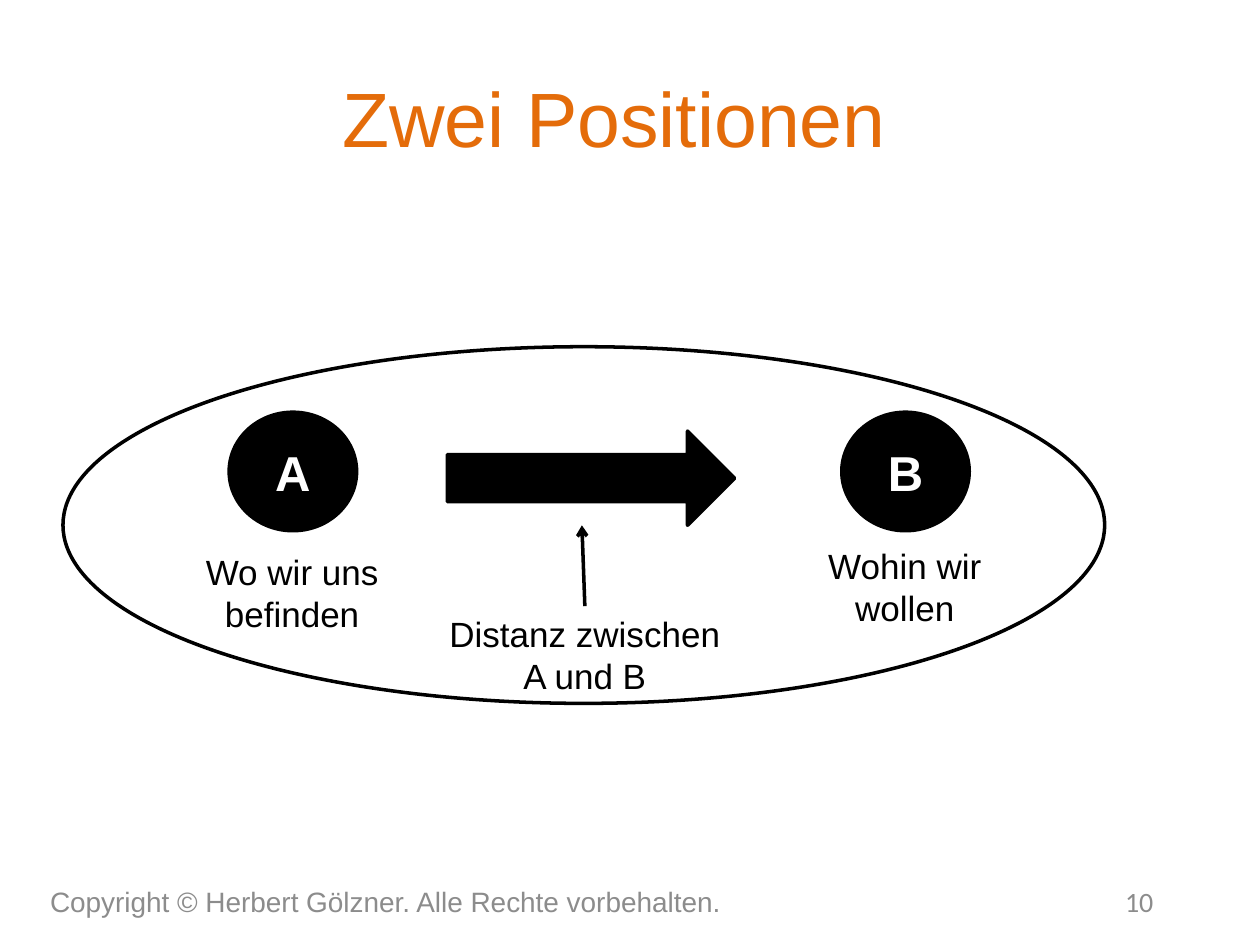
import pptx
import pptx.dml.color
import pptx.enum.shapes
import pptx.enum.text
import pptx.util
from lxml import etree
from pptx.oxml.ns import qn

Cm = pptx.util.Cm
Pt = pptx.util.Pt
SHAPE = pptx.enum.shapes.MSO_SHAPE
ALIGN = pptx.enum.text.PP_ALIGN
ANCHOR = pptx.enum.text.MSO_ANCHOR

BLACK, WHITE, ORANGE, GREY = "000000", "FFFFFF", "E46C0A", "8C8C8C"


def color(hex_code):
    return pptx.dml.color.RGBColor.from_string(hex_code)


class SlideBuilder:
    font = "Arial"
    line_width = 2

    def __init__(self, slide):
        self.slide = slide

    def set_text(self, shape, text, size, ink, align=ALIGN.CENTER,
                 anchor=ANCHOR.MIDDLE, font=None, bold=False):
        frame = shape.text_frame
        frame.word_wrap = True
        frame.vertical_anchor = anchor
        frame.text = text
        paragraph = frame.paragraphs[0]
        paragraph.alignment = align
        paragraph.font.name = font or self.font
        paragraph.font.size = Pt(size)
        paragraph.font.bold = bold
        paragraph.font.color.rgb = color(ink)

    def title(self, text, left, top, width, height):
        heading = self.slide.shapes.title
        heading.left, heading.top = Cm(left), Cm(top)
        heading.width, heading.height = Cm(width), Cm(height)
        self.set_text(heading, text, 44, ORANGE)

    def text(self, text, left, top, width, height, size=20, ink=BLACK, **style):
        box = self.slide.shapes.add_textbox(Cm(left), Cm(top), Cm(width), Cm(height))
        self.set_text(box, text, size, ink, **style)

    def shape(self, kind, left, top, width, height, fill=BLACK):
        shape = self.slide.shapes.add_shape(
            kind, Cm(left), Cm(top), Cm(width), Cm(height))
        shape.shadow.inherit = False
        shape.fill.solid()
        shape.fill.fore_color.rgb = color(fill)
        shape.line.color.rgb = color(BLACK)
        shape.line.width = Pt(self.line_width)
        return shape

    def position(self, letter, left, top):
        circle = self.shape(SHAPE.OVAL, left, top, 2.57, 2.39)
        self.set_text(circle, letter, 28, WHITE, bold=True)

    def pointer(self, x1, y1, x2, y2):
        line = self.slide.shapes.add_connector(
            pptx.enum.shapes.MSO_CONNECTOR.STRAIGHT, Cm(x1), Cm(y1), Cm(x2), Cm(y2))
        line.line.color.rgb = color(BLACK)
        line.line.width = Pt(self.line_width)
        properties = line._element.spPr
        etree.SubElement(properties.find(qn("a:ln")), qn("a:tailEnd"), type="arrow")
        etree.SubElement(properties, qn("a:effectLst"))


def main():
    deck = pptx.Presentation()
    deck.slide_width, deck.slide_height = Cm(25.4), Cm(19.05)
    page = SlideBuilder(deck.slides.add_slide(deck.slide_layouts[5]))

    page.title("Zwei Positionen", 1.27, 0.76, 22.23, 3.18)

    # Footer
    page.text("Copyright © Herbert Gölzner. Alle Rechte vorbehalten.",
              0.76, 17.65, 16.15, 1.02, size=16, ink=GREY, align=ALIGN.LEFT)
    page.text("10", 17.58, 17.65, 5.92, 1.02, size=16, ink=GREY,
              align=ALIGN.RIGHT, font="Calibri")

    # Field with the way from A to B
    page.shape(SHAPE.OVAL, 1.27, 6.99, 21, 7.19, fill=WHITE)
    page.shape(SHAPE.RIGHT_ARROW, 9.02, 8.69, 5.79, 1.9)
    for letter, left in (("A", 4.62), ("B", 16.97)):
        page.position(letter, left, 8.31)

    # Captions
    for caption, left, top, width in (
        ("Wo wir uns befinden", 3.86, 10.97, 4.06),
        ("Wohin wir wollen", 16.36, 10.85, 3.76),
        ("Distanz zwischen A und B", 8.74, 12.22, 6.1),
    ):
        page.text(caption, left, top, width, 1.96, anchor=ANCHOR.TOP)
    page.pointer(11.79, 12.22, 11.73, 10.59)

    deck.save("out.pptx")


if __name__ == "__main__":
    main()
